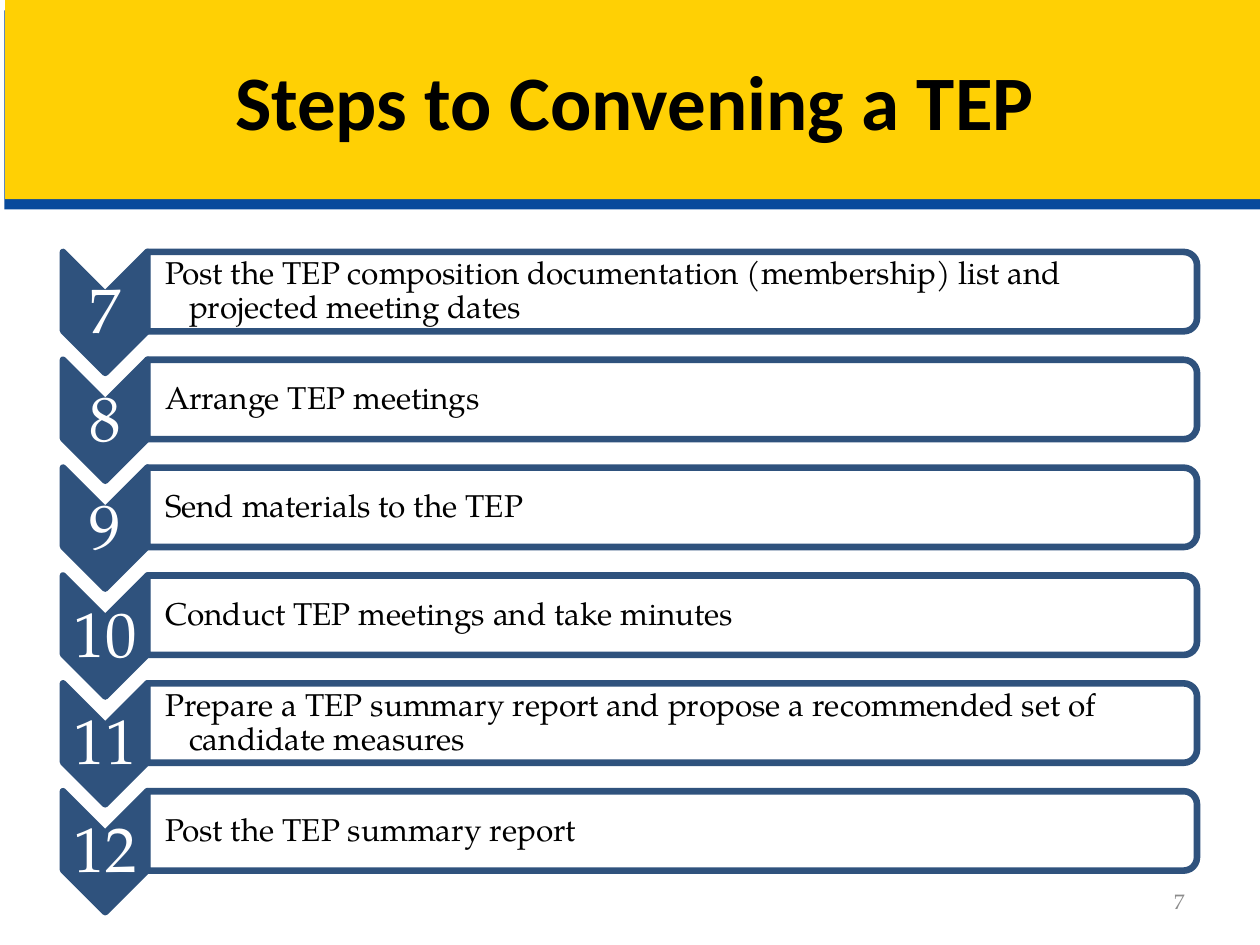
"""Build the slide listing steps 7 to 12 of convening a TEP."""
from dataclasses import dataclass

import pptx
import pptx.dml.color
import pptx.enum.shapes
import pptx.enum.text
import pptx.oxml
import pptx.oxml.ns
import pptx.util

Inches = pptx.util.Inches
Pt = pptx.util.Pt
RGBColor = pptx.dml.color.RGBColor
Shape = pptx.enum.shapes.MSO_SHAPE
Align = pptx.enum.text.PP_ALIGN

NAVY = RGBColor(0x2F, 0x52, 0x7D)
YELLOW = RGBColor(0xFF, 0xD0, 0x04)
WHITE = RGBColor(0xFF, 0xFF, 0xFF)
BLACK = RGBColor(0, 0, 0)
GRAY = RGBColor(0x8C, 0x8C, 0x8C)
SERIF = "TeX Gyre Pagella"

FIRST_TOP = 2.0
ROW_PITCH = 0.856


@dataclass(frozen=True)
class Area:
    left: float
    top: float
    width: float
    height: float

    def lengths(self) -> list:
        return [Inches(v) for v in (self.left, self.top, self.width, self.height)]

    def before_quarter_turn(self) -> "Area":
        shift = (self.width - self.height) / 2
        return Area(self.left + shift, self.top - shift, self.height, self.width)


@dataclass(frozen=True)
class Style:
    size: float
    color: RGBColor
    align: Align = Align.LEFT
    font: str = SERIF
    bold: bool = False
    spacing: float = 1.0
    hanging: float = 0.0
    insets: tuple = (0.1, 0.05, 0.1, 0.05)


@dataclass(frozen=True)
class Step:
    number: int
    action: str


STEPS = [
    Step(7, "Post the TEP composition documentation (membership) list and projected meeting dates"),
    Step(8, "Arrange TEP meetings"),
    Step(9, "Send materials to the TEP"),
    Step(10, "Conduct TEP meetings and take minutes"),
    Step(11, "Prepare a TEP summary report and propose a recommended set of candidate measures"),
    Step(12, "Post the TEP summary report"),
]
TITLE = Style(44, BLACK, Align.CENTER, "Calibri", bold=True)
NUMBER = Style(36, WHITE, Align.CENTER, spacing=0.9, insets=(0.03,) * 4)
ACTION = Style(18, BLACK, spacing=0.9, hanging=0.19, insets=(0.14, 0.01, 0.01, 0.01))
PAGE = Style(12, GRAY, Align.RIGHT)


def write(holder, text: str, style: Style) -> None:
    frame = holder.text_frame
    frame.word_wrap = True
    frame.vertical_anchor = pptx.enum.text.MSO_ANCHOR.MIDDLE
    (frame.margin_left, frame.margin_top,
     frame.margin_right, frame.margin_bottom) = map(Inches, style.insets)
    paragraph = frame.paragraphs[0]
    paragraph.alignment = style.align
    paragraph.line_spacing = style.spacing
    if style.hanging:
        properties = paragraph._p.get_or_add_pPr()
        properties.set("marL", str(Inches(style.hanging)))
        properties.set("indent", str(-Inches(style.hanging)))
    run = paragraph.add_run()
    run.text = text
    run.font.name = style.font
    run.font.size = Pt(style.size)
    run.font.bold = style.bold
    run.font.color.rgb = style.color


def add_label(slide, area: Area, text: str, style: Style) -> None:
    write(slide.shapes.add_textbox(*area.lengths()), text, style)


def add_turned(slide, kind: Shape, area: Area, fill: RGBColor, opacity: int = 100) -> None:
    turned = slide.shapes.add_shape(kind, *area.before_quarter_turn().lengths())
    turned.rotation = 90
    turned.shadow.inherit = False
    turned.fill.solid()
    turned.fill.fore_color.rgb = fill
    turned.line.color.rgb = NAVY
    turned.line.width = Pt(3.78)
    qn = pptx.oxml.ns.qn
    turned.line._get_or_add_ln().append(pptx.oxml.parse_xml(
        f'<a:round {pptx.oxml.ns.nsdecls("a")}/>'))
    if opacity < 100:
        color = turned._element.spPr.find(qn("a:solidFill"))[0]
        color.append(pptx.oxml.parse_xml(
            f'<a:alpha {pptx.oxml.ns.nsdecls("a")} val="{opacity * 1000}"/>'))


def add_step(slide, step: Step, top: float) -> None:
    add_turned(slide, Shape.CHEVRON, Area(0.5, top, 0.67, 0.96), NAVY)
    add_label(slide, Area(0.5, top + 0.34, 0.67, 0.29), str(step.number), NUMBER)
    add_turned(slide, Shape.ROUND_2_SAME_RECTANGLE, Area(1.17, top, 8.33, 0.63), WHITE, 90)
    add_label(slide, Area(1.17, top + 0.03, 8.3, 0.57), step.action, ACTION)


def add_title(slide, text: str) -> None:
    banner = slide.shapes.add_shape(Shape.RECTANGLE, *Area(0.04, 0, 10, 1.58).lengths())
    banner.fill.solid()
    banner.fill.fore_color.rgb = YELLOW
    banner.line.fill.background()
    banner._element.spPr.append(pptx.oxml.parse_xml(
        f'<a:effectLst {pptx.oxml.ns.nsdecls("a")}>'
        f'<a:outerShdw dist="{Pt(6)}" dir="{94 * 60000}" algn="ctr" rotWithShape="0">'
        '<a:srgbClr val="084A9C"/></a:outerShdw></a:effectLst>'))
    write(banner, text, TITLE)


def main() -> None:
    deck = pptx.Presentation()
    deck.slide_width, deck.slide_height = Inches(10), Inches(7.5)
    slide = deck.slides.add_slide(deck.slide_layouts[6])
    for row, step in enumerate(STEPS):
        add_step(slide, step, FIRST_TOP + row * ROW_PITCH)
    add_title(slide, "Steps to Convening a TEP")
    add_label(slide, Area(7.17, 6.95, 2.33, 0.4), "7", PAGE)
    deck.save("out.pptx")


if __name__ == "__main__":
    main()
